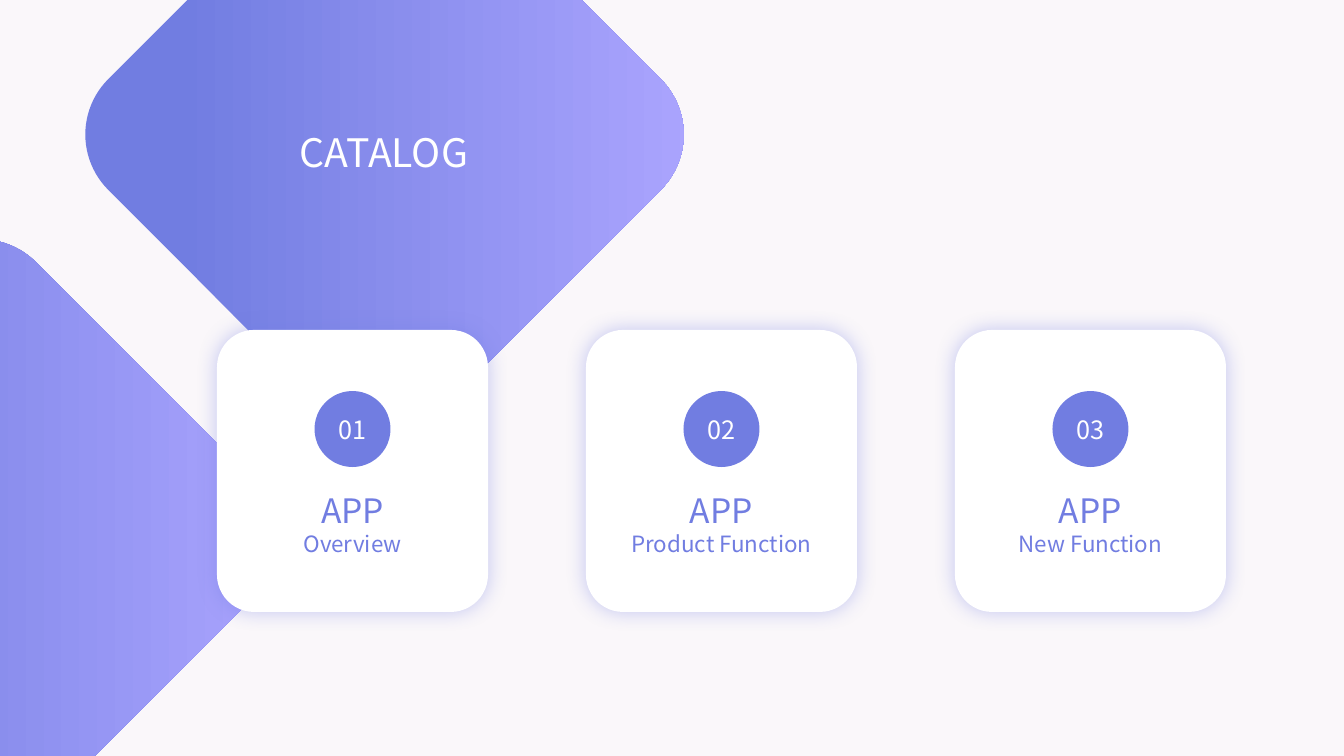
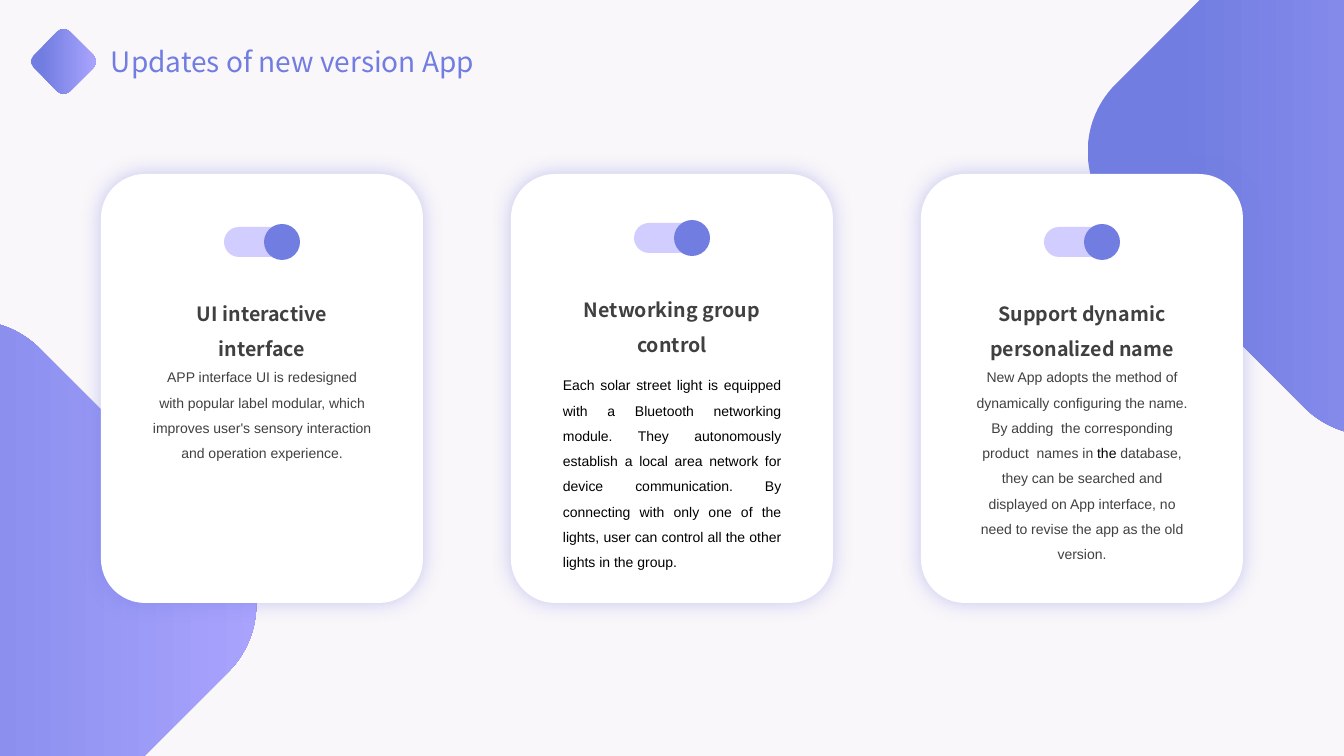
from dataclasses import dataclass

from lxml import etree
from pptx import Presentation
from pptx.dml.color import RGBColor
from pptx.enum.shapes import MSO_SHAPE
from pptx.enum.text import MSO_ANCHOR, MSO_AUTO_SIZE, PP_ALIGN
from pptx.oxml.ns import qn
from pptx.util import Emu, Pt

ROUNDED, OVAL = MSO_SHAPE.ROUNDED_RECTANGLE, MSO_SHAPE.OVAL
LEFT, CENTER, JUSTIFY = PP_ALIGN.LEFT, PP_ALIGN.CENTER, PP_ALIGN.JUSTIFY
MIDDLE, GROW = MSO_ANCHOR.MIDDLE, MSO_AUTO_SIZE.SHAPE_TO_FIT_TEXT
SLIDE_WIDTH, SLIDE_HEIGHT = 1344, 756
EMU_PER_PX = 12192000 / SLIDE_WIDTH


@dataclass(frozen=True)
class Theme:
    background: str = "FAF7FA"
    primary: str = "717DE1"
    light: str = "ADA6FF"
    track: str = "D1CDFF"
    white: str = "FFFFFF"
    dark: str = "404040"
    black: str = "000000"
    heading_font: str = "Noto Sans CJK SC"
    body_font: str = "Arial"
    catalog_size: int = 28
    app_size: int = 24
    title_size: int = 20
    number_size: int = 18
    topic_size: int = 16
    feature_size: int = 14
    body_size: int = 10
    gradient_start: float = 0.19
    card_corner: float = 0.137
    shadow_blur: int = 15
    shadow_opacity: int = 40


THEME = Theme()

CATALOG = "CATALOG"
CATALOG_ITEMS = [
    ("01", "APP", "Overview"),
    ("02", "APP", "Product Function"),
    ("03", "APP", "New Function"),
]
CATALOG_DIAMONDS = [(-254, 304, 469), (150, -100, 469)]
CATALOG_CARDS = dict(left=217, top=330, width=271, height=282, pitch=369)

UPDATES_TITLE = "Updates of new version App"
# Heading, body runs, body alignment, gap above the body in points, upward shift
UPDATES = [
    ("UI interactive interface",
     [("APP interface UI is redesigned with popular label modular, which improves "
       "user's sensory interaction and operation experience.", THEME.dark)],
     CENTER, 0, 0),
    ("Networking group control",
     [("Each solar street light is equipped with a Bluetooth networking module. "
       "They autonomously establish a local area network for device communication. "
       "By connecting with only one of the lights, user can control all the other "
       "lights in the group.", THEME.black)],
     JUSTIFY, 8.6, 4),
    ("Support dynamic personalized name",
     [("New App adopts the method of dynamically configuring the name. "
       "By adding  the corresponding product  names in ", THEME.dark),
      ("the ", THEME.black),
      ("database, they can be searched and displayed on App interface, "
       "no need to revise the app as the old version.", THEME.dark)],
     CENTER, 0, 0),
]
UPDATES_DIAMONDS = [(1143, -77, 457), (-256, 376, 457)]
UPDATES_CARDS = dict(left=101, top=174, width=322, height=429, pitch=410)


def px(value):
    return Emu(round(value * EMU_PER_PX))


def rgb(value):
    return RGBColor.from_string(value)


def add_shape(shapes, kind, left, top, width, height, color=None, corner=None):
    shape = shapes.add_shape(kind, px(left), px(top), px(width), px(height))
    shape.shadow.inherit = False
    shape.line.fill.background()
    if color:
        shape.fill.solid()
        shape.fill.fore_color.rgb = rgb(color)
    if corner is not None:
        shape.adjustments[0] = corner
    return shape


def add_diamond(slide, left, top, size, corner=0.167):
    diamond = add_shape(slide.shapes, ROUNDED, left, top, size, size, corner=corner)
    diamond.rotation = 45
    diamond.fill.gradient()
    diamond.fill.gradient_angle = 45
    stops = [(THEME.gradient_start, THEME.primary), (1, THEME.light)]
    for stop, (position, color) in zip(diamond.fill.gradient_stops, stops):
        stop.position = position
        stop.color.rgb = rgb(color)


def add_card(slide, left, top, width, height):
    card = add_shape(slide.shapes, ROUNDED, left, top, width, height,
                     THEME.white, THEME.card_corner)
    effects = card._element.spPr.find(qn("a:effectLst"))
    shadow = etree.SubElement(effects, qn("a:outerShdw"), algn="ctr", rotWithShape="0",
                              blurRad=str(Pt(THEME.shadow_blur)), dist="0", dir="0")
    color = etree.SubElement(shadow, qn("a:srgbClr"), val=THEME.primary)
    etree.SubElement(color, qn("a:alpha"), val=str(THEME.shadow_opacity * 1000))


def add_cards(slide, layout, count):
    """Draw a row of equally spaced cards and return their left edges."""
    lefts = [layout["left"] + index * layout["pitch"] for index in range(count)]
    for left in lefts:
        add_card(slide, left, layout["top"], layout["width"], layout["height"])
    return lefts


def add_run(paragraph, text, size, color, font=THEME.heading_font, bold=False):
    run = paragraph.add_run()
    run.text = text
    run.font.name = font
    run.font.size = Pt(size)
    run.font.bold = bold
    run.font.color.rgb = rgb(color)


def add_text_frame(slide, left, top, width, height):
    frame = slide.shapes.add_textbox(px(left), px(top), px(width), px(height)).text_frame
    frame.word_wrap = True
    frame.auto_size = GROW
    return frame


def add_line(slide, box, text, size, color, alignment):
    """Add a text box holding a single line."""
    paragraph = add_text_frame(slide, *box).paragraphs[0]
    paragraph.alignment = alignment
    add_run(paragraph, text, size, color)


def add_toggle(slide, left, top, width=76, track_height=30, knob=36):
    toggle = slide.shapes.add_group_shape()
    add_shape(toggle.shapes, ROUNDED, left, top, width, track_height, THEME.track, 0.5)
    add_shape(toggle.shapes, OVAL, left + width - knob, top + (track_height - knob) / 2,
              knob, knob, THEME.primary)


def new_slide(presentation):
    slide = presentation.slides.add_slide(presentation.slide_layouts[6])
    slide.background.fill.solid()
    slide.background.fill.fore_color.rgb = rgb(THEME.background)
    return slide


def build_catalog(presentation):
    slide = new_slide(presentation)
    for diamond in CATALOG_DIAMONDS:
        add_diamond(slide, *diamond)
    add_line(slide, (182, 123, 404, 57), CATALOG, THEME.catalog_size, THEME.white, CENTER)

    lefts = add_cards(slide, CATALOG_CARDS, len(CATALOG_ITEMS))
    badge_size, text_width = 76, 243
    for left, (number, name, topic) in zip(lefts, CATALOG_ITEMS):
        center = left + CATALOG_CARDS["width"] / 2
        badge = add_shape(slide.shapes, OVAL, center - badge_size / 2, 391,
                          badge_size, badge_size, THEME.primary)
        badge.text_frame.vertical_anchor = MIDDLE
        paragraph = badge.text_frame.paragraphs[0]
        paragraph.alignment = CENTER
        add_run(paragraph, number, THEME.number_size, THEME.white)

        frame = add_text_frame(slide, center - text_width / 2, 485, text_width, 78)
        lines = [(name, THEME.app_size), (topic, THEME.topic_size)]
        for index, (text, size) in enumerate(lines):
            paragraph = frame.add_paragraph() if index else frame.paragraphs[0]
            paragraph.alignment = CENTER
            add_run(paragraph, text, size, THEME.primary)


def build_updates(presentation):
    slide = new_slide(presentation)
    add_diamond(slide, 38, 36, 51)
    add_line(slide, (101, 40, 625, 44), UPDATES_TITLE, THEME.title_size, THEME.primary, LEFT)
    for diamond in UPDATES_DIAMONDS:
        add_diamond(slide, *diamond, corner=0.208)

    lefts = add_cards(slide, UPDATES_CARDS, len(UPDATES))
    toggle_width, text_width = 76, 238
    for left, (heading, body, alignment, gap, shift) in zip(lefts, UPDATES):
        center = left + UPDATES_CARDS["width"] / 2
        add_toggle(slide, center - toggle_width / 2, 227 - shift, toggle_width)
        frame = add_text_frame(slide, center - text_width / 2, 285 - shift, text_width, 285)
        title = frame.paragraphs[0]
        title.alignment = CENTER
        title.line_spacing = 1.5
        add_run(title, heading, THEME.feature_size, THEME.dark, bold=True)
        description = frame.add_paragraph()
        description.alignment = alignment
        description.line_spacing = 1.5
        description.space_before = Pt(gap)
        for text, color in body:
            add_run(description, text, THEME.body_size, color, THEME.body_font)


def main():
    presentation = Presentation()
    presentation.slide_width = px(SLIDE_WIDTH)
    presentation.slide_height = px(SLIDE_HEIGHT)
    build_catalog(presentation)
    build_updates(presentation)
    presentation.save("out.pptx")


if __name__ == "__main__":
    main()
